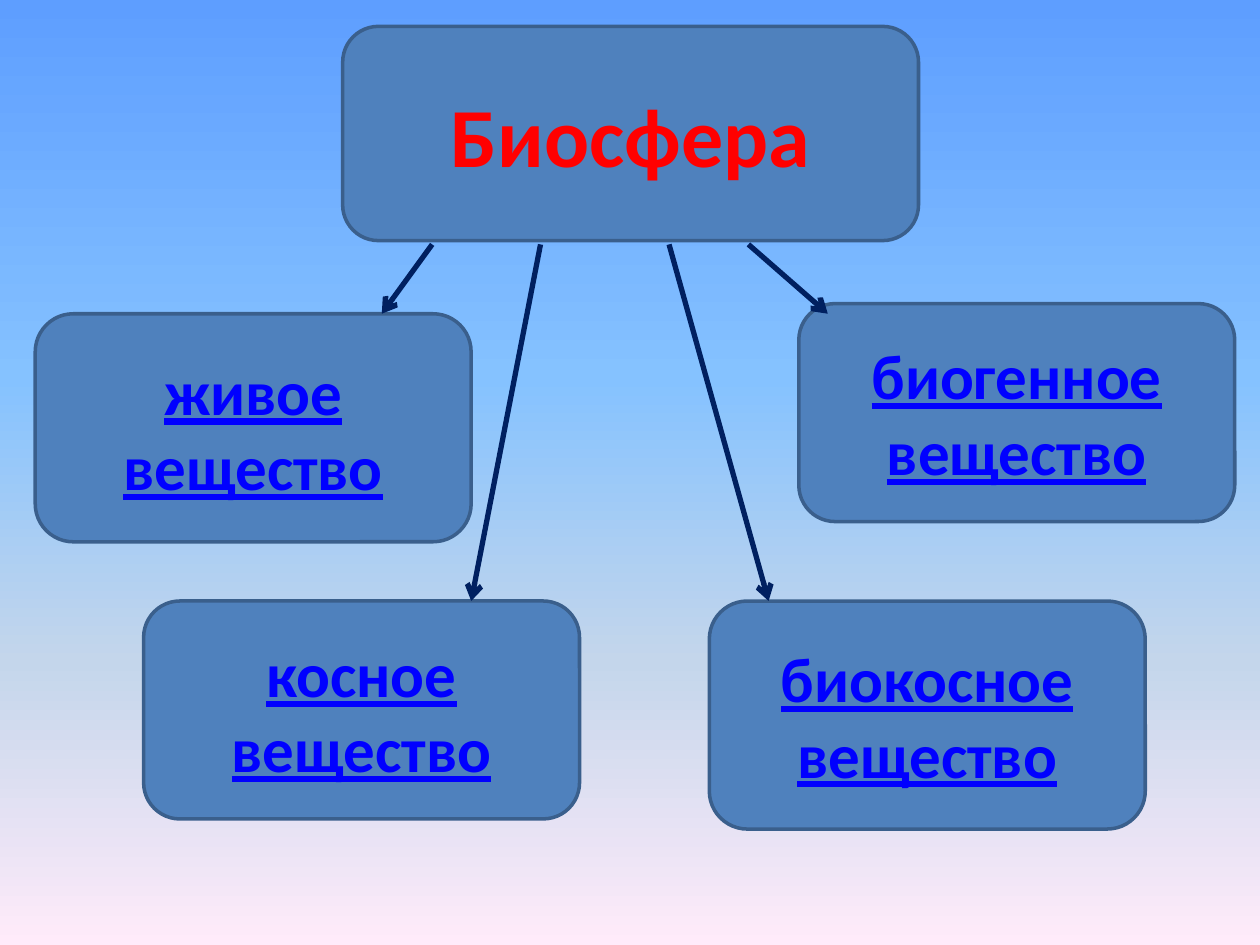
import pptx
import pptx.dml.color
import pptx.enum.shapes
import pptx.enum.text
import pptx.oxml
import pptx.oxml.ns
import pptx.util

Inches = pptx.util.Inches
Pt = pptx.util.Pt
RGBColor = pptx.dml.color.RGBColor

BOX_FILL = RGBColor(0x4F, 0x81, 0xBD)
BOX_LINE = RGBColor(0x3A, 0x5F, 0x8C)
TITLE_RED = RGBColor(0xFF, 0x00, 0x00)
TERM_BLUE = RGBColor(0x00, 0x00, 0xFF)
ARROW_NAVY = RGBColor(0x00, 0x20, 0x60)

# Position in percent and colour, from top to bottom
BACKGROUND_STOPS = [
    (0, RGBColor(0x5E, 0x9E, 0xFF)),
    (40, RGBColor(0x85, 0xC2, 0xFF)),
    (70, RGBColor(0xC4, 0xD6, 0xEB)),
    (100, RGBColor(0xFF, 0xEB, 0xFA)),
]

TITLE_FONT = {"name": "Calibri", "size": Pt(48), "bold": True}
TERM_FONT = {"name": "Calibri", "size": Pt(36), "bold": True, "underline": True}

TITLE = ("Биосфера", 2.72, 0.21, 4.57, 1.7)

# Text, left, top, height
TERM_WIDTH = 3.46
TERMS = [
    ("живое вещество", 0.28, 2.49, 1.81),
    ("биогенное вещество", 6.34, 2.41, 1.73),
    ("косное вещество", 1.14, 4.77, 1.73),
    ("биокосное вещество", 5.63, 4.77, 1.81),
]

# Start x, end x, end y; all arrows start just below the title box
ARROW_TOP = 1.94
ARROWS = [
    (3.43, 3.03, 2.49),
    (5.31, 6.1, 4.77),
    (4.29, 3.74, 4.77),
    (5.94, 6.57, 2.49),
]


def set_background(slide):
    """Fill the slide with a vertical gradient of several stops."""
    stops = "".join(
        f'<a:gs pos="{percent * 1000}"><a:srgbClr val="{color}"/></a:gs>'
        for percent, color in BACKGROUND_STOPS
    )
    background = pptx.oxml.parse_xml(
        f'<p:bg {pptx.oxml.ns.nsdecls("p", "a")}><p:bgPr>'
        f'<a:gradFill rotWithShape="1"><a:gsLst>{stops}</a:gsLst>'
        '<a:lin ang="5400000" scaled="0"/></a:gradFill>'
        "<a:effectLst/></p:bgPr></p:bg>"
    )
    slide.element.cSld.insert(0, background)


def add_box(slide, text, left, top, width, height, font_values, color):
    shape = slide.shapes.add_shape(
        pptx.enum.shapes.MSO_SHAPE.ROUNDED_RECTANGLE,
        Inches(left), Inches(top), Inches(width), Inches(height),
    )
    shape.shadow.inherit = False
    shape.fill.solid()
    shape.fill.fore_color.rgb = BOX_FILL
    shape.line.color.rgb = BOX_LINE
    shape.line.width = Pt(2)

    frame = shape.text_frame
    frame.word_wrap = True
    frame.vertical_anchor = pptx.enum.text.MSO_ANCHOR.MIDDLE
    paragraph = frame.paragraphs[0]
    paragraph.alignment = pptx.enum.text.PP_ALIGN.CENTER
    run = paragraph.add_run()
    run.text = text
    for attribute, value in font_values.items():
        setattr(run.font, attribute, value)
    run.font.color.rgb = color


def add_arrow(slide, start_x, end_x, end_y):
    connector = slide.shapes.add_connector(
        pptx.enum.shapes.MSO_CONNECTOR.STRAIGHT,
        Inches(start_x), Inches(ARROW_TOP), Inches(end_x), Inches(end_y),
    )
    connector.line.color.rgb = ARROW_NAVY
    connector.line.width = Pt(3)
    namespace = pptx.oxml.ns.nsdecls("a")
    connector.line._get_or_add_ln().append(
        pptx.oxml.parse_xml(f'<a:tailEnd {namespace} type="arrow"/>')
    )
    connector.element.spPr.append(pptx.oxml.parse_xml(f"<a:effectLst {namespace}/>"))


def main():
    presentation = pptx.Presentation()
    presentation.slide_width = Inches(10)
    presentation.slide_height = Inches(7.5)
    slide = presentation.slides.add_slide(presentation.slide_layouts[6])

    set_background(slide)
    add_box(slide, *TITLE, TITLE_FONT, TITLE_RED)
    for text, left, top, height in TERMS:
        add_box(slide, text, left, top, TERM_WIDTH, height, TERM_FONT, TERM_BLUE)
    for arrow in ARROWS:
        add_arrow(slide, *arrow)

    presentation.save("out.pptx")


if __name__ == "__main__":
    main()
